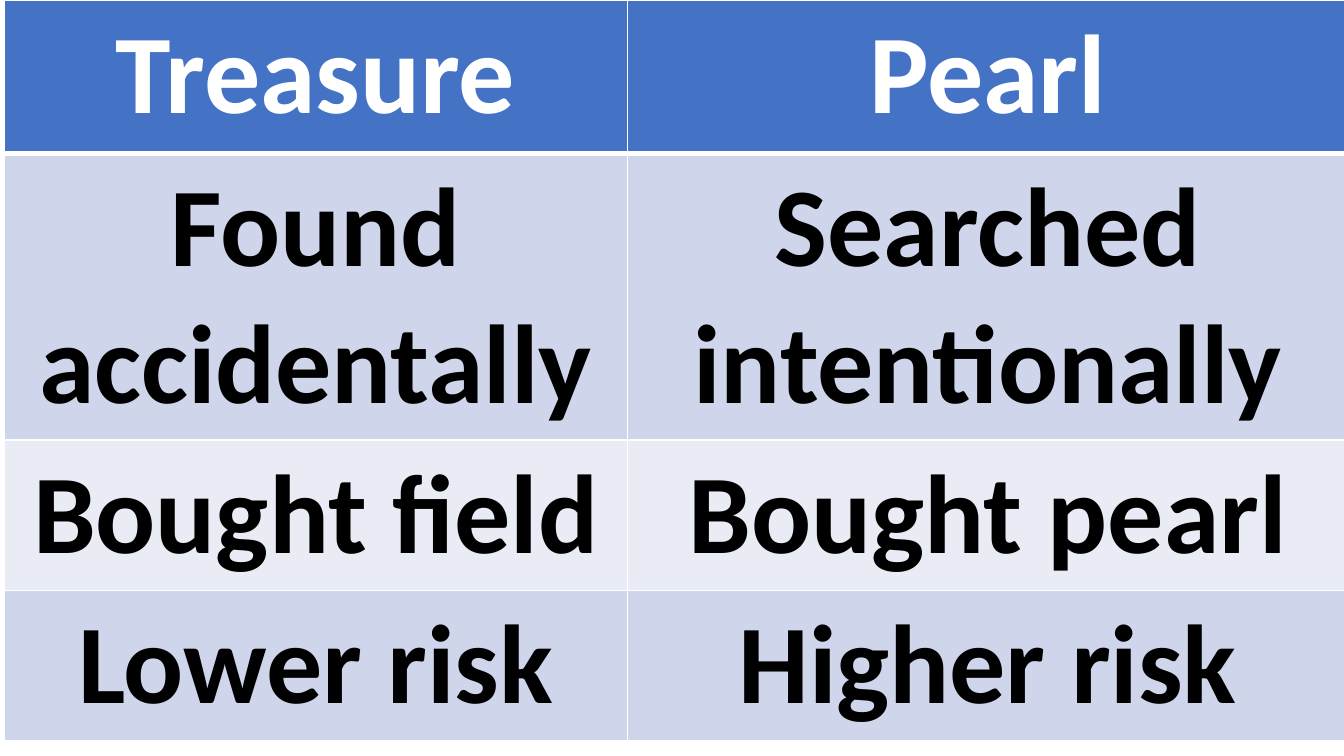
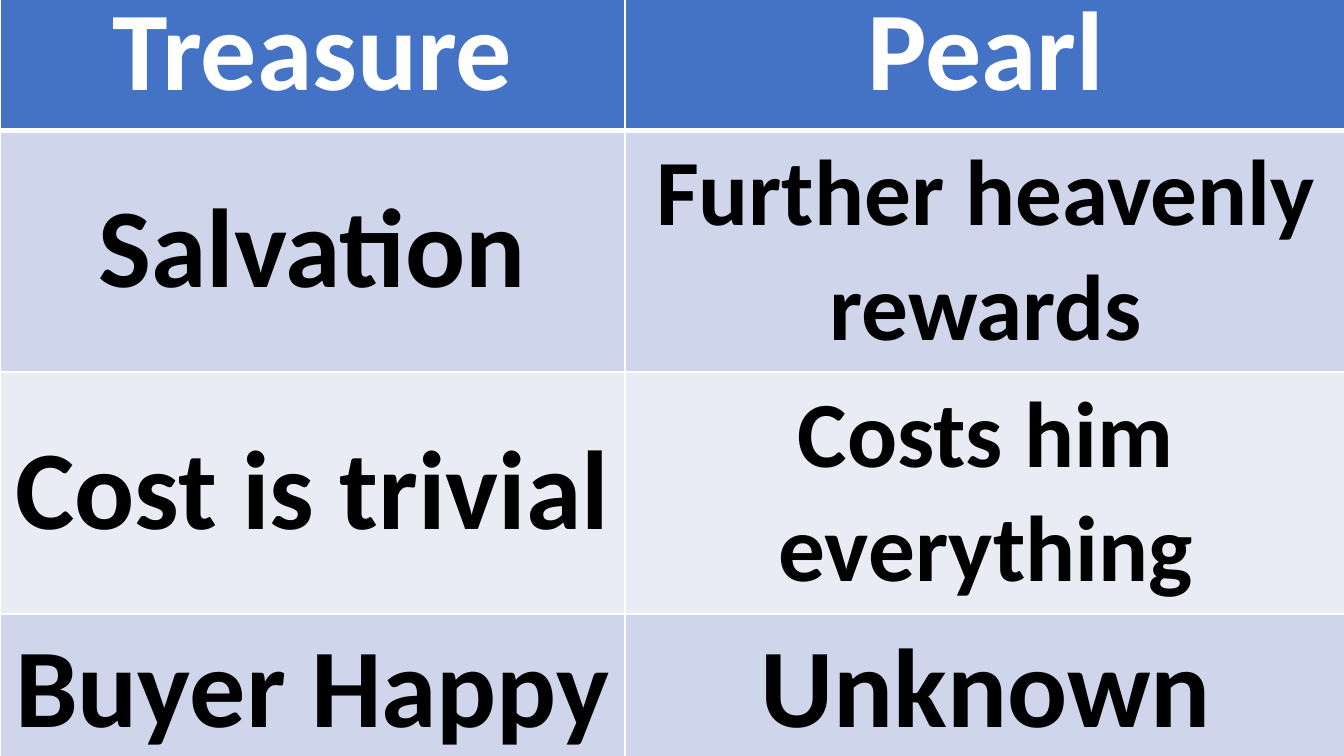
"""Two slides of tables that compare the treasure and the pearl."""
from lxml.etree import SubElement as Sub
from pptx import Presentation
from pptx.dml.color import RGBColor as Rgb
from pptx.enum.text import PP_ALIGN as Align
from pptx.oxml.ns import qn
from pptx.util import Inches, Pt

HUES = {"head": "4472C4", "dark": "CFD5EA", "light": "E9EBF5",
        "white": "FFFFFF", "black": "000000"}
BANDS = ["head", "dark", "light", "dark"]
HEAD = ("Treasure", "Pearl")
FONT, BIG, SMALL = "Calibri", 60, 50
DROP = 0.38

pages = [
    {"left": 0.03, "top": 0, "cols": [4.64, 5.36],
     "tall": [1.14, 2.13, 1.12, 1.11],
     "rows": [HEAD,
              ("Found accidentally", "Searched intentionally"),
              ("Bought field", "Bought pearl"),
              ("Lower risk", "Higher risk")],
     "small": [], "drop": []},
    {"left": 0, "top": -0.17, "cols": [4.65, 5.37],
     "tall": [1.14, 1.8, 1.8, 1.12],
     "rows": [HEAD,
              ("Salvation", "Further heavenly rewards"),
              ("Cost is trivial", "Costs him everything"),
              ("Buyer Happy", "Unknown")],
     "small": [(1, 1), (2, 1)], "drop": [(1, 0), (2, 0)]},
]


def edge(cell, sides):
    """Draw white borders; sides maps an edge tag to its width in points."""
    props = cell._tc.get_or_add_tcPr()
    for spot, (side, width) in enumerate(sides.items()):
        line = Sub(props, qn("a:" + side), w=str(Pt(width)))
        fill = Sub(line, qn("a:solidFill"))
        Sub(fill, qn("a:srgbClr"), val=HUES["white"])
        props.insert(spot, line)


deck = Presentation()
deck.slide_width = Inches(10)
deck.slide_height = deck.slide_width * 9 // 16

for page in pages:
    slide = deck.slides.add_slide(deck.slide_layouts[6])
    rows, cols, tall = page["rows"], page["cols"], page["tall"]
    table = slide.shapes.add_table(
        len(rows), len(cols), Inches(page["left"]), Inches(page["top"]),
        Inches(sum(cols)), Inches(sum(tall))).table
    for col, width in zip(table.columns, cols):
        col.width = Inches(width)
    for r, (texts, band) in enumerate(zip(rows, BANDS)):
        table.rows[r].height = Inches(tall[r])
        for c, text in enumerate(texts):
            cell = table.cell(r, c)
            cell.fill.solid()
            cell.fill.fore_color.rgb = Rgb.from_string(HUES[band])
            edge(cell, {"lnL": 1, "lnR": 1, "lnT": 3 if r == 1 else 1,
                        "lnB": 1 if r else 3})
            if (r, c) in page["drop"]:
                cell.margin_top = Inches(DROP)
            cell.text_frame.text = text
            para = cell.text_frame.paragraphs[0]
            para.alignment = Align.CENTER
            font = para.runs[0].font
            font.name, font.bold = FONT, True
            font.size = Pt(SMALL if (r, c) in page["small"] else BIG)
            font.color.rgb = Rgb.from_string(HUES["black" if r else "white"])

deck.save("out.pptx")
